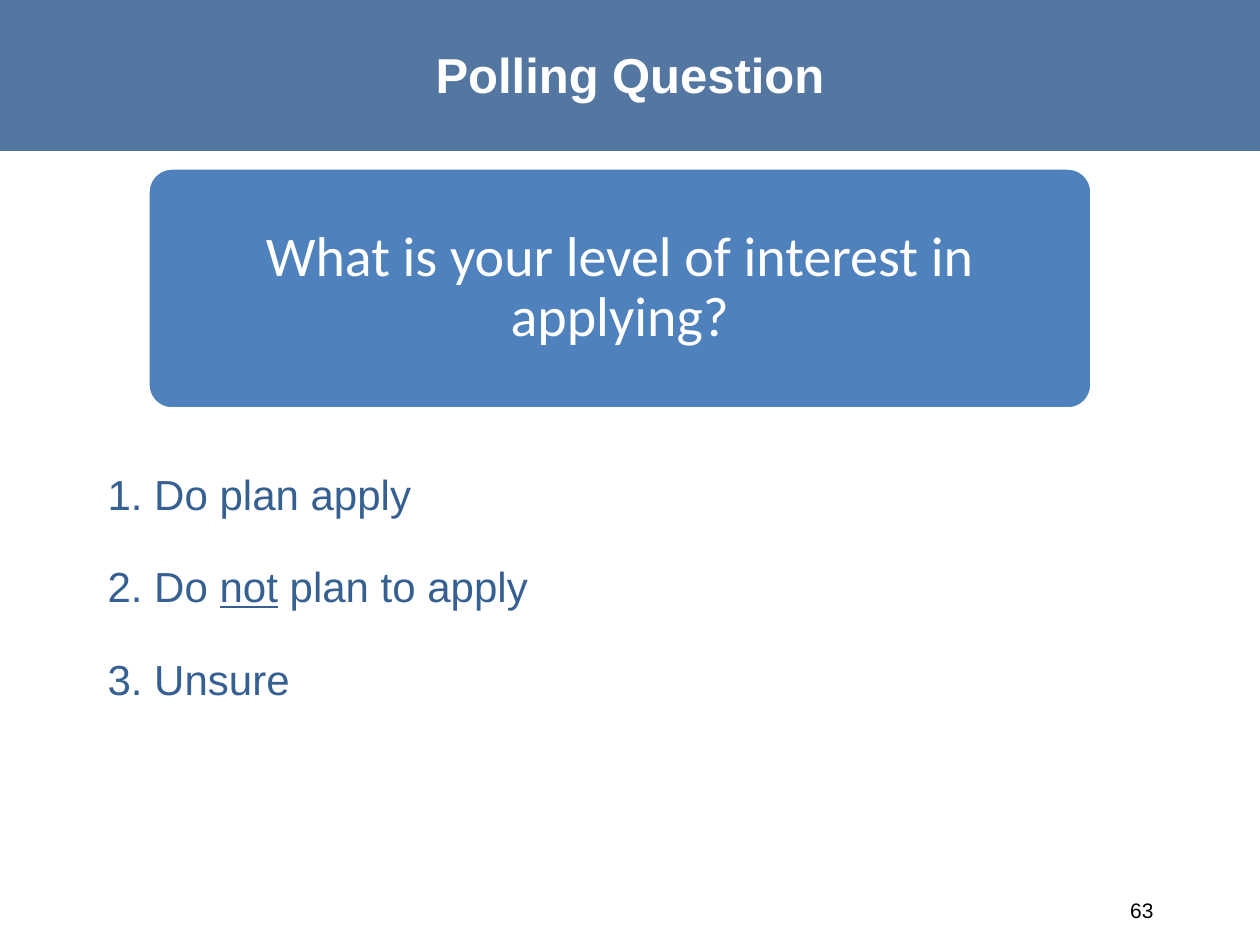
from pptx import Presentation
from pptx.dml.color import RGBColor
from pptx.enum.shapes import MSO_SHAPE
from pptx.enum.text import MSO_ANCHOR, MSO_AUTO_SIZE, PP_ALIGN
from pptx.oxml.xmlchemy import OxmlElement
from pptx.util import Inches, Pt

LEFT, CENTER, RIGHT = PP_ALIGN.LEFT, PP_ALIGN.CENTER, PP_ALIGN.RIGHT
TOP, MIDDLE = MSO_ANCHOR.TOP, MSO_ANCHOR.MIDDLE

TITLE = "Polling Question"
QUESTION = "What is your level of interest in applying?"
# Each answer is a list of (text, underlined) runs.
ANSWERS = [
    [("1. Do plan apply", False)],
    [("2. Do ", False), ("not", True), (" plan to apply", False)],
    [("3. Unsure", False)],
]
PAGE_NUMBER = "63"

COLORS = {"navy": "376092", "blue": "4F81BD", "white": "FFFFFF", "black": "000000"}
SLIDE_SIZE = (1260, 945)
BANNER_BOX = (0, 0, 1260, 151)
TITLE_BOX = (0, 0, 1260, 147)
QUESTION_BOX = (148, 168, 944, 241)
ANSWERS_BOX = (95, 462, 935, 344)
NUMBER_BOX = (872, 885, 294, 50)


def px(length):
    return round(length * Inches(1) / 126)


def color(name):
    return RGBColor.from_string(COLORS[name])


def place(shape, box):
    shape.left, shape.top, shape.width, shape.height = map(px, box)


def add_block(slide, preset, box, fill):
    shape = slide.shapes.add_shape(preset, *map(px, box))
    shape.shadow.inherit = False
    shape.fill.solid()
    shape.fill.fore_color.rgb = color(fill)
    return shape


def write(shape, paragraphs, size, ink, font="Arial", bold=False, align=LEFT,
          anchor=MIDDLE, line_spacing=1.0, space_after=0):
    """Fill a shape with paragraphs, each a list of (text, underlined) runs."""
    frame = shape.text_frame
    frame.word_wrap = True
    frame.auto_size = MSO_AUTO_SIZE.NONE
    frame.vertical_anchor = anchor
    for index, runs in enumerate(paragraphs):
        paragraph = frame.paragraphs[0] if index == 0 else frame.add_paragraph()
        properties = paragraph._p.get_or_add_pPr()
        properties.set("marL", "0")
        properties.set("indent", "0")
        properties.append(OxmlElement("a:buNone"))
        paragraph.alignment = align
        paragraph.line_spacing = line_spacing
        paragraph.space_before = Pt(0)
        paragraph.space_after = Pt(space_after)
        for text, underlined in runs:
            run = paragraph.add_run()
            run.text = text
            run.font.name = font
            run.font.size = Pt(size)
            run.font.bold = bold
            run.font.underline = underlined
            run.font.color.rgb = color(ink)


def add_banner(slide):
    """Add the translucent band behind everything else."""
    banner = add_block(slide, MSO_SHAPE.RECTANGLE, BANNER_BOX, "navy")
    banner.line.fill.background()
    alpha = OxmlElement("a:alpha")
    alpha.set("val", "85000")
    banner.fill._xPr.solidFill.srgbClr.append(alpha)
    slide.shapes._spTree.insert(2, banner._element)


def add_question(slide):
    question = add_block(slide, MSO_SHAPE.ROUNDED_RECTANGLE, QUESTION_BOX, "blue")
    question.adjustments[0] = 0.1
    question.line.color.rgb = color("white")
    question.line.width = Pt(2)
    write(question, [[(QUESTION, False)]], size=32, ink="white", font="Calibri",
          align=CENTER, line_spacing=0.9)


def main():
    presentation = Presentation()
    presentation.slide_width, presentation.slide_height = map(px, SLIDE_SIZE)
    slide = presentation.slides.add_slide(presentation.slide_layouts[1])

    add_banner(slide)
    title, answers = slide.shapes.title, slide.placeholders[1]
    place(title, TITLE_BOX)
    write(title, [[(TITLE, False)]], size=28, ink="white", bold=True, align=CENTER)
    add_question(slide)
    place(answers, ANSWERS_BOX)
    write(answers, ANSWERS, size=24, ink="navy", anchor=TOP, space_after=24)
    number = slide.shapes.add_textbox(*map(px, NUMBER_BOX))
    write(number, [[(PAGE_NUMBER, False)]], size=12, ink="black", align=RIGHT)

    presentation.save("out.pptx")


if __name__ == "__main__":
    main()
